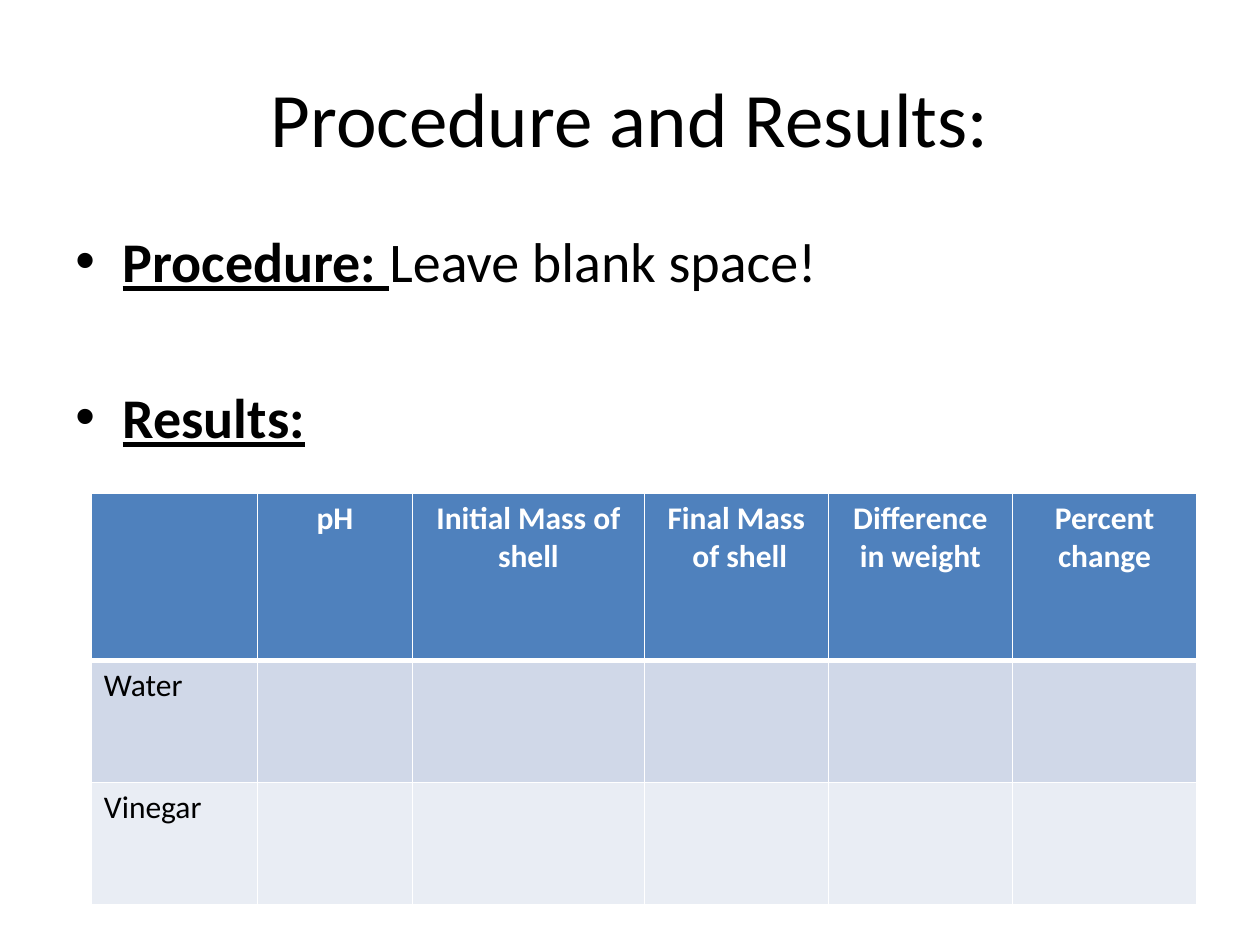
from lxml.etree import SubElement
from pptx import Presentation
from pptx.dml.color import RGBColor as RGB
from pptx.enum.text import MSO_ANCHOR as Anchor, PP_ALIGN as Align
from pptx.oxml.ns import qn
from pptx.util import Pt


def color(value):
    return RGB.from_string(value)


def add_text(p, text, size=18, fill="000000", bold=False, underline=False, font="Calibri"):
    r = p.add_run()
    r.text = text
    r.font.name = font
    r.font.size = Pt(size)
    r.font.bold = bold
    r.font.underline = underline
    r.font.color.rgb = color(fill)


class Deck:
    header_fill = "4F81BD"
    row_fills = ["D0D8E8", "E9EDF4"]
    white = "FFFFFF"
    indent = 27

    def __init__(self):
        self.prs = Presentation()
        self.prs.slide_width, self.prs.slide_height = Pt(720), Pt(540)
        self.s = self.prs.slides.add_slide(self.prs.slide_layouts[5])

    def title(self, text, x, y, w, h):
        sp = self.s.shapes.title
        sp.left, sp.top, sp.width, sp.height = Pt(x), Pt(y), Pt(w), Pt(h)
        tf = sp.text_frame
        tf.vertical_anchor = Anchor.MIDDLE
        p = tf.paragraphs[0]
        p.alignment = Align.CENTER
        add_text(p, text, size=44)

    def bullets(self, items, x, y, w, h, gap):
        tf = self.s.shapes.add_textbox(Pt(x), Pt(y), Pt(w), Pt(h)).text_frame
        tf.word_wrap = True
        for i, (label, rest) in enumerate(items):
            p = tf.paragraphs[0] if i == 0 else tf.add_paragraph()
            p.space_before = Pt(gap if i else 0)
            pPr = p._p.get_or_add_pPr()
            pPr.set("marL", str(Pt(self.indent)))
            pPr.set("indent", str(-Pt(self.indent)))
            SubElement(pPr, qn("a:buFont"), typeface="Arial")
            SubElement(pPr, qn("a:buChar"), char="•")
            add_text(p, label, size=32, bold=True, underline=True)
            if rest:
                add_text(p, rest, size=32)

    def borders(self, cell, top, bottom):
        tcPr = cell._tc.get_or_add_tcPr()
        for side, width in (("L", 1), ("R", 1), ("T", top), ("B", bottom)):
            ln = SubElement(tcPr, qn(f"a:ln{side}"), w=str(Pt(width)))
            fill = SubElement(ln, qn("a:solidFill"))
            SubElement(fill, qn("a:srgbClr"), val=self.white)

    def table(self, headers, labels, x, y, widths, heights):
        tbl = self.s.shapes.add_table(len(heights), len(widths), Pt(x), Pt(y),
                                      Pt(sum(widths)), Pt(sum(heights))).table
        for col, w in zip(tbl.columns, widths):
            col.width = Pt(w)
        rows = [headers] + [[label] + [""] * (len(widths) - 1) for label in labels]
        for i, texts in enumerate(rows):
            tbl.rows[i].height = Pt(heights[i])
            for j, text in enumerate(texts):
                cell = tbl.cell(i, j)
                self.borders(cell, 3 if i == 1 else 1, 3 if i == 0 else 1)
                cell.fill.solid()
                cell.fill.fore_color.rgb = color(self.row_fills[i - 1] if i else self.header_fill)
                if text:
                    self.cell_text(cell.text_frame, text, header=i == 0)

    def cell_text(self, tf, text, header):
        for k, line in enumerate(text.split("\n")):
            p = tf.add_paragraph() if k else tf.paragraphs[0]
            p.alignment = Align.CENTER if header else Align.LEFT
            add_text(p, line, fill=self.white if header else "000000", bold=header)


def main():
    deck = Deck()
    deck.title("Procedure and Results:", 36, 21.6, 648, 90)
    deck.bullets([("Procedure: ", "Leave blank space!"), ("Results:", "")],
                 36, 126, 648, 356.4, gap=50.7)
    deck.table(["", "pH", "Initial Mass of shell", "Final Mass\n of shell",
                "Difference in weight", "Percent change"],
               ["Water", "Vinegar"], 52.2, 281.8,
               [94.8, 88.8, 132.4, 105.2, 105.2, 105.2], [95.6, 69.8, 69.8])
    deck.prs.save("out.pptx")


if __name__ == "__main__":
    main()
